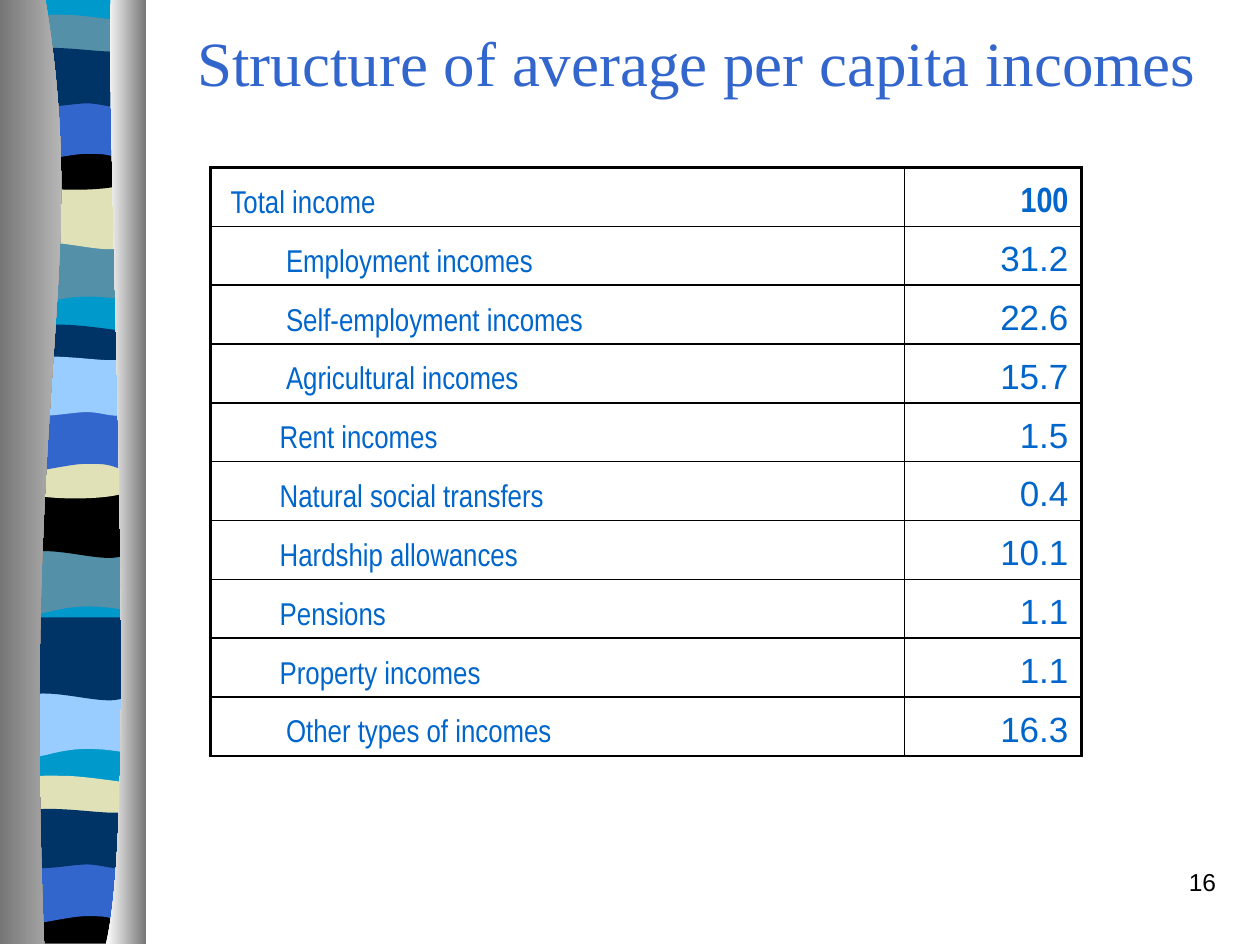
from dataclasses import dataclass

from lxml import etree
from pptx import Presentation
from pptx.dml.color import RGBColor
from pptx.enum import text as t
from pptx.oxml import ns
from pptx.util import Inches, Pt

Point = tuple[float, float]
Segment = tuple[Point, ...]

LEFT, RIGHT = 0.05, 1.14
TEAL, SLATE, SAND = "0099CC", "5490A8", "E1E1B7"
BLACK, ROYAL, NAVY, SKY = "000000", "3366CC", "003366", "99CCFF"
TABLE_BLUE = "0066CC"
SQUEEZE: Point = (0.75, 1.33)


@dataclass(frozen=True)
class Wave:
    height: float
    top: tuple[Segment, ...] = ()
    bottom: tuple[Segment, ...] = ()


@dataclass(frozen=True)
class Band:
    wave: Wave
    y: float
    color: str


@dataclass(frozen=True)
class Income:
    label: str
    value: str
    indent: float


HOLLOW_TOP = (((0.72, 0.05), (0.91, 0), (RIGHT, 0)),)
SHEET = Wave(7.47)
DIP = Wave(0.47, bottom=(((0.39, 0.39), (0.24, 0.55), (LEFT, 0.47)),))
SWELL = Wave(0.47, bottom=(((0.96, 0.55), (0.39, 0.41), (LEFT, 0.47)),))
CAP = Wave(
    0.24,
    (((0.12, -0.05), (0.29, -0.04), (0.47, -0.04)),
     ((0.65, -0.04), (1, -0.01), (RIGHT, 0))),
    (((0.96, 0.29), (0.24, 0.29), (LEFT, 0.24)),),
)
HOLLOW = Wave(0.33, HOLLOW_TOP, (((0.96, 0.38), (0.24, 0.38), (LEFT, 0.33)),))
BASE = Wave(0.37, HOLLOW_TOP)
ARCH = Wave(0.47, bottom=(
    ((0.97, 0.42), (0.9, 0.42), (0.72, 0.42)),
    ((0.54, 0.42), (0.22, 0.47), (LEFT, 0.47)),
))
CREST = Wave(
    0.31,
    (((0.21, -0.05), (0.79, 0), (0.97, 0)),),
    (((1.07, 0.36), (0.9, 0.31), (0.72, 0.31)),
     ((0.54, 0.31), (0.17, 0.36), (LEFT, 0.31))),
)

BANDS = [
    Band(SHEET, 0, TEAL),
    Band(DIP, 1.85, SLATE),
    Band(SWELL, 1.41, SAND),
    Band(CAP, 0.21, SLATE),
    Band(HOLLOW, 1.08, BLACK),
    Band(ARCH, 0.74, ROYAL),
    Band(CREST, 0.46, NAVY),
    Band(DIP, 4.31, SLATE),
    Band(SWELL, 3.86, BLACK),
    Band(CAP, 2.67, NAVY),
    Band(HOLLOW, 3.53, SAND),
    Band(ARCH, 3.2, ROYAL),
    Band(CREST, 2.91, SKY),
    Band(DIP, 5.44, SKY),
    Band(SWELL, 4.99, NAVY),
    Band(CAP, 6.25, SAND),
    Band(BASE, 7.12, BLACK),
    Band(ARCH, 6.79, ROYAL),
    Band(CREST, 6.5, NAVY),
]

INCOMES = [
    Income("Total income", "100", 0.06),
    Income("Employment incomes", "31.2", 0.5),
    Income("Self-employment incomes", "22.6", 0.5),
    Income("Agricultural incomes", "15.7", 0.5),
    Income("Rent incomes", "1.5", 0.45),
    Income("Natural social transfers", "0.4", 0.45),
    Income("Hardship allowances", "10.1", 0.45),
    Income("Pensions", "1.1", 0.45),
    Income("Property incomes", "1.1", 0.45),
    Income("Other types of incomes", "16.3", 0.5),
]


def rgb(color: str) -> RGBColor:
    return RGBColor.from_string(color)


def draw_outline(shapes, segments: list[Segment], y: float = 0, scale: Point = (1, 1)):
    xs, ys = zip(*(point for segment in segments for point in segment))
    left, top = min(xs), min(ys)
    width, height = max(xs) - left, max(ys) - top
    builder = shapes.build_freeform(0, 0, scale=1.0)
    builder.add_line_segments([(Inches(width), Inches(height))], close=True)
    shape = builder.convert_to_shape(Inches(left), Inches(top + y))
    outline = shape._element.find(".//" + ns.qn("a:path"))
    for child in list(outline):
        outline.remove(child)
    for index, segment in enumerate(segments):
        tag = "a:moveTo" if index == 0 else "a:cubicBezTo" if len(segment) == 3 else "a:lnTo"
        step = etree.SubElement(outline, ns.qn(tag))
        for px, py in segment:
            local_x = width / 2 + (px - left - width / 2) * scale[0]
            local_y = height / 2 + (py - top - height / 2) * scale[1]
            etree.SubElement(step, ns.qn("a:pt"),
                             x=str(Inches(local_x)), y=str(Inches(local_y)))
    etree.SubElement(outline, ns.qn("a:close"))
    shape.shadow.inherit = False
    shape.line.fill.background()
    return shape


def draw_band(shapes, band: Band) -> None:
    wave = band.wave
    segments = [((LEFT, 0),), *wave.top, ((RIGHT, 0),),
                ((RIGHT, wave.height),), *wave.bottom, ((LEFT, wave.height),)]
    scale = (SQUEEZE[0], 1) if wave is SHEET or wave is BASE else SQUEEZE
    shape = draw_outline(shapes, segments, band.y, scale)
    shape.fill.solid()
    shape.fill.fore_color.rgb = rgb(band.color)


def draw_curtain(shapes, edge: list[Segment], side: float, start: str, end: str) -> None:
    fill = draw_outline(shapes, edge + [((side, 7.49),), ((side, 0),)]).fill
    fill.gradient()
    fill.gradient_angle = 0
    for stop, color, position in zip(fill.gradient_stops, (start, end), (0, 1)):
        stop.color.rgb = rgb(color)
        stop.position = position


def style(para, size: float, font: str, color: str, align, bold: bool = False) -> None:
    para.alignment = align
    para.font.size = Pt(size)
    para.font.name = font
    para.font.bold = bold
    para.font.color.rgb = rgb(color)


def fill_cell(cell, content: str, **widths: float):
    properties = cell._tc.get_or_add_tcPr()
    for side in "LRTB":
        line = etree.SubElement(
            properties, ns.qn(f"a:ln{side}"), w=str(Pt(widths.get(side, 1))))
        fill = etree.SubElement(line, ns.qn("a:solidFill"))
        etree.SubElement(fill, ns.qn("a:srgbClr"), val=BLACK)
    cell.fill.background()
    cell.vertical_anchor = t.MSO_ANCHOR.BOTTOM
    cell.text = content
    return cell.text_frame.paragraphs[0]


def draw_table(page) -> None:
    table = page.shapes.add_table(
        len(INCOMES), 2, Inches(1.67), Inches(1.33), Inches(6.91), Inches(4.67)).table
    table.first_row = table.horz_banding = False
    table.columns[0].width, table.columns[1].width = Inches(5.51), Inches(1.4)
    for index, income in enumerate(INCOMES):
        total = index == 0
        top = 2 if total else 1
        para = fill_cell(table.cell(index, 0), income.label, L=2, T=top)
        style(para, 18, "Arial Narrow", TABLE_BLUE, t.PP_ALIGN.LEFT)
        para._p.get_or_add_pPr().set("marL", str(Inches(income.indent)))
        para = fill_cell(table.cell(index, 1), income.value, R=2, T=top)
        font = "Arial Narrow" if total else "Arial"
        style(para, 20, font, TABLE_BLUE, t.PP_ALIGN.RIGHT, total)


def draw_ribbon(deck, page) -> None:
    ribbon = page.shapes.add_group_shape()
    for band in BANDS:
        draw_band(ribbon.shapes, band)
    left_edge = [((0.36, 0),), ((0.72, 2.16), (0.17, 2.96), (0.35, 7.49))]
    draw_curtain(ribbon.shapes, left_edge, 0, "767676", "D5D5D5")
    right_edge = [((0.88, 0),), ((0.84, 1.25), (1.11, 6.46), (0.84, 7.49))]
    draw_curtain(ribbon.shapes, right_edge, 1.16, "FFFFFF", "767676")
    deck.slide_master.shapes._spTree.insert(2, ribbon._element)


def main() -> None:
    deck = Presentation()
    deck.slide_width, deck.slide_height = Inches(10), Inches(7.5)
    page = deck.slides.add_slide(deck.slide_layouts[5])
    draw_ribbon(deck, page)

    number = page.shapes.add_textbox(Inches(7.67), Inches(6.83), Inches(2.08), Inches(0.5))
    number.text_frame.word_wrap = True
    number.text_frame.text = "16"
    style(number.text_frame.paragraphs[0], 14, "Arial", BLACK, t.PP_ALIGN.RIGHT)

    title = page.shapes.title
    title.left, title.top = Inches(1.28), Inches(0.5)
    title.width, title.height = Inches(8.5), Inches(0.58)
    title.text_frame.text = "Structure of average per capita incomes\v"
    title.text_frame.auto_size = t.MSO_AUTO_SIZE.NONE
    title.text_frame.vertical_anchor = t.MSO_ANCHOR.MIDDLE
    style(title.text_frame.paragraphs[0], 36, "Times New Roman", ROYAL, t.PP_ALIGN.CENTER)

    draw_table(page)
    deck.save("out.pptx")


if __name__ == "__main__":
    main()
